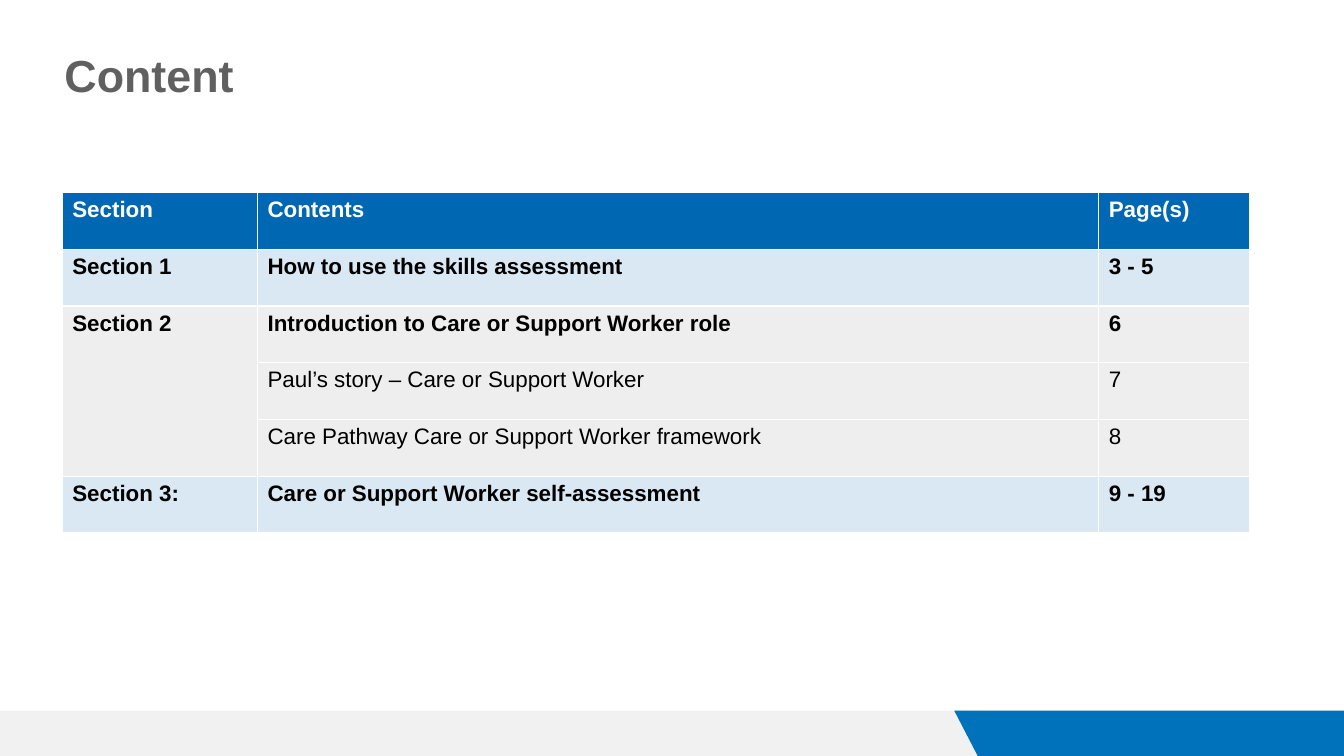
import pptx
import pptx.dml.color
import pptx.enum.text
import pptx.oxml
import pptx.oxml.ns
import pptx.util
from lxml import etree

Cm = pptx.util.Cm
Pt = pptx.util.Pt
COLORS = {
    "white": "FFFFFF",
    "black": "000000",
    "title": "606060",
    "grey": "CACACA",
    "blue": "0068B3",
    "footer": "0071BB",
}


def paint(fill, color, opacity=100):
    """Set a solid fill with an opacity in percent."""
    fill.solid()
    fill.fore_color.rgb = pptx.dml.color.RGBColor.from_string(COLORS[color])
    if opacity < 100:
        # The fill's own colour element is the last one in its parent
        parent = fill._xPr
        tint = parent.findall(".//" + pptx.oxml.ns.qn("a:srgbClr"))[-1]
        etree.SubElement(tint, pptx.oxml.ns.qn("a:alpha"), val=str(opacity * 1000))


def write(frame, text, size, color, bold):
    """Put one formatted paragraph into a text frame."""
    frame.text = text
    font = frame.paragraphs[0].font
    for name, value in {"name": "Arial", "size": Pt(size), "bold": bold}.items():
        setattr(font, name, value)
    font.color.rgb = pptx.dml.color.RGBColor.from_string(COLORS[color])


deck = pptx.Presentation()
deck.slide_width, deck.slide_height = Cm(33.87), Cm(19.05)
page = deck.slides.add_slide(deck.slide_layouts[5])

# Footer bands
footer_bands = [
    ("grey", 25, [(0, 17.91), (24.79, 17.91), (25.37, 19.05), (0, 19.05)]),
    ("footer", 100, [(24.05, 17.91), (33.87, 17.91), (33.87, 19.05), (24.64, 19.05)]),
]
for color, opacity, corners in footer_bands:
    points = [(Cm(x), Cm(y)) for x, y in corners]
    outline = page.shapes.build_freeform(*points[0])
    outline.add_line_segments(points[1:], close=True)
    band = outline.convert_to_shape()
    band.shadow.inherit = False
    band.line.fill.background()
    paint(band.fill, color, opacity)

# Title
title = page.shapes.title
title.left, title.top, title.width, title.height = Cm(1.37), Cm(0.99), Cm(24.74), Cm(1.96)
write(title.text_frame, "Content", 32, "title", True)
title.text_frame.vertical_anchor = pptx.enum.text.MSO_ANCHOR.MIDDLE
title.text_frame.paragraphs[0].alignment = pptx.enum.text.PP_ALIGN.LEFT
title.text_frame.paragraphs[0].line_spacing = 0.9

# Contents table: fill, opacity, text colour, bold, cell texts
header = ("blue", 100, "white", True)
section = ("blue", 15, "black", True)
section_grey = ("grey", 30, "black", True)
detail = ("grey", 30, "black", False)
rows = [
    (header, ["Section", "Contents", "Page(s)"]),
    (section, ["Section 1", "How to use the skills assessment", "3 - 5"]),
    (section_grey, ["Section 2", "Introduction to Care or Support Worker role", "6"]),
    (detail, ["", "Paul’s story – Care or Support Worker", "7"]),
    (detail, ["", "Care Pathway Care or Support Worker framework", "8"]),
    (section, ["Section 3:", "Care or Support Worker self-assessment", "9 - 19"]),
]
column_widths = [4.92, 21.2, 3.8]
row_height = 1.43
table = page.shapes.add_table(
    len(rows), len(column_widths), Cm(1.57), Cm(4.85),
    Cm(sum(column_widths)), Cm(row_height * len(rows)),
).table
for column, width in zip(table.columns, column_widths):
    column.width = Cm(width)

for row_index, ((color, opacity, text_color, bold), texts) in enumerate(rows):
    table.rows[row_index].height = Cm(row_height)
    for column_index, text in enumerate(texts):
        cell = table.cell(row_index, column_index)
        properties = cell._tc.get_or_add_tcPr()
        for side in ("lnL", "lnR", "lnT", "lnB"):
            properties.append(pptx.oxml.parse_xml(
                f'<a:{side} {pptx.oxml.ns.nsdecls("a")} w="{Pt(1)}"><a:solidFill>'
                f'<a:srgbClr val="{COLORS["white"]}"/></a:solidFill></a:{side}>'
            ))
        paint(cell.fill, color, opacity)
        if text:
            write(cell.text_frame, text, 16, text_color, bold)

table.cell(2, 0).merge(table.cell(4, 0))

deck.save("out.pptx")
